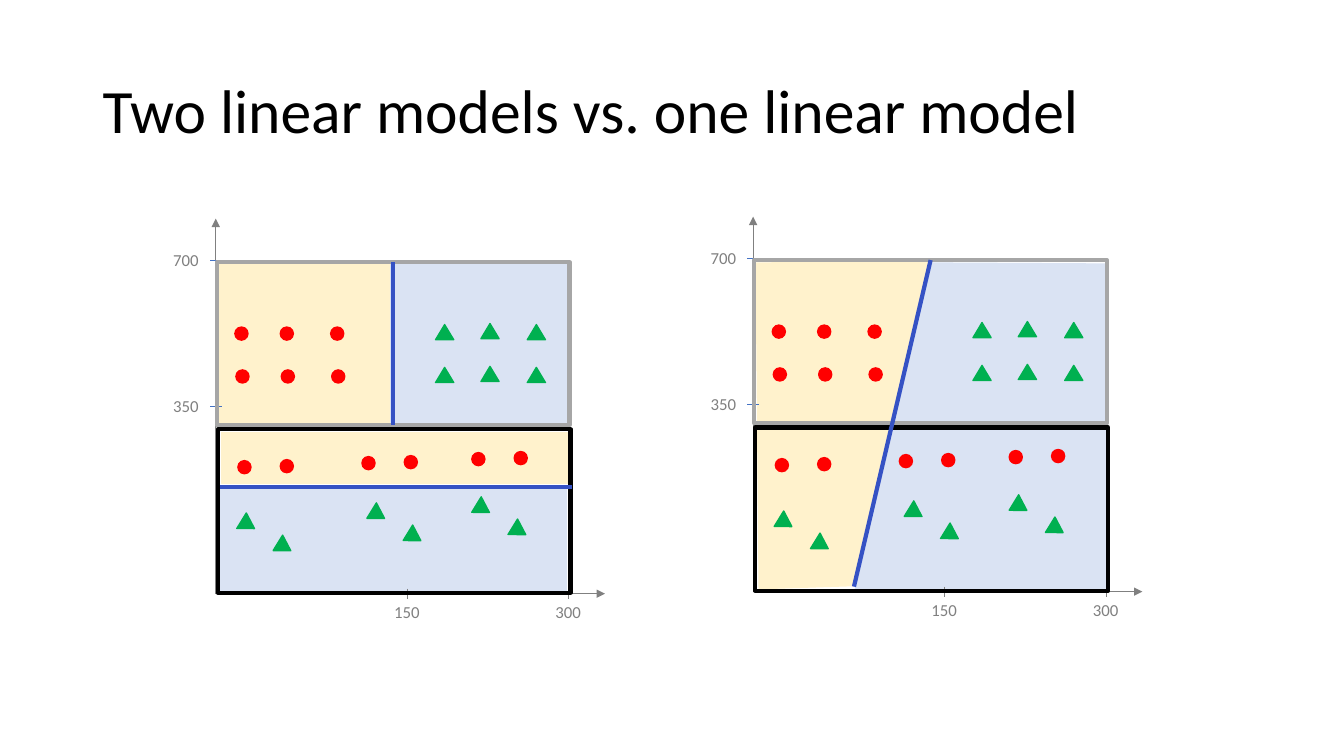
from dataclasses import dataclass

from lxml.etree import SubElement
from pptx import Presentation
from pptx.dml.color import RGBColor
from pptx.enum.shapes import MSO_CONNECTOR, MSO_SHAPE
from pptx.enum.text import MSO_ANCHOR
from pptx.oxml.ns import qn
from pptx.util import Inches, Pt


@dataclass(frozen=True)
class Theme:
    """Colours, font, type sizes and line widths of the slide."""
    font: str = "Calibri"
    title_size: int = 44
    label_size: int = 12
    title: str = "000000"
    axis: str = "808080"
    tick: str = "4472C4"
    cream: str = "FFF2CC"
    blue: str = "DAE3F3"
    circle: str = "FF0000"
    triangle: str = "00B050"
    upper_frame: str = "A6A6A6"
    lower_frame: str = "000000"
    boundary: str = "3552C4"
    thin: float = 0.5
    outline: float = 1
    thick: float = 3


THEME = Theme()
CELL = Inches(0.1)
LEFT_PANEL = (21.4, 21.7)
RIGHT_PANEL = (74.7, 21.5)
AXIS_WIDTH, AXIS_HEIGHT = 38.6, 37.2
X_TICKS = {"150": 19, "300": 35}
Y_TICKS = {"700": 4.1, "350": 18.6}
CIRCLE_SIZE = (1.3, 1.3)
TRIANGLE_SIZE = (1.8, 1.5)


@dataclass(frozen=True)
class Panel:
    """A plot whose positions count grid cells from the tip of its vertical axis."""
    slide: object
    column: float = 0
    row: float = 0

    def place(self, column, row):
        """Return the slide position of a grid point."""
        return round((self.column + column) * CELL), round((self.row + row) * CELL)

    def box(self, column, row, width, height):
        """Return the position and size of a grid rectangle."""
        return *self.place(column, row), round(width * CELL), round(height * CELL)


def paint(shape, fill, line, width=THEME.outline):
    """Set the fill and outline of a shape and drop its shadow."""
    shape.shadow.inherit = False
    if fill:
        shape.fill.solid()
        shape.fill.fore_color.rgb = RGBColor.from_string(fill)
    else:
        shape.fill.background()
    shape.line.color.rgb = RGBColor.from_string(line)
    shape.line.width = Pt(width)


def add_region(panel, box, color):
    """Add a rectangular class region."""
    paint(panel.slide.shapes.add_shape(MSO_SHAPE.RECTANGLE, *panel.box(*box)), color, color)


def add_polygon(panel, corners, color):
    """Add a class region with slanted sides."""
    points = [panel.place(*corner) for corner in corners]
    builder = panel.slide.shapes.build_freeform(*points[0], scale=1.0)
    builder.add_line_segments(points[1:], close=True)
    paint(builder.convert_to_shape(), color, color)


def add_frame(panel, box, color):
    """Add an unfilled thick frame and return it."""
    frame = panel.slide.shapes.add_shape(MSO_SHAPE.RECTANGLE, *panel.box(*box))
    paint(frame, None, color, THEME.thick)
    return frame


def add_line(panel, start, end, color, width=THEME.thin, arrow=False):
    """Add a straight line, with an arrowhead at its end if asked."""
    line = panel.slide.shapes.add_connector(
        MSO_CONNECTOR.STRAIGHT, *panel.place(*start), *panel.place(*end))
    line.line.color.rgb = RGBColor.from_string(color)
    line.line.width = Pt(width)
    if arrow:
        SubElement(line.line._get_or_add_ln(), qn("a:tailEnd"), type="triangle")
    SubElement(line._element.spPr, qn("a:effectLst"))
    return line


def add_text(panel, box, text, size, color, wrap=False):
    """Add a text box with one paragraph and return it."""
    shape = panel.slide.shapes.add_textbox(*panel.box(*box))
    shape.text_frame.word_wrap = wrap
    paragraph = shape.text_frame.paragraphs[0]
    paragraph.text = text
    paragraph.font.name = THEME.font
    paragraph.font.size = Pt(size)
    paragraph.font.color.rgb = RGBColor.from_string(color)
    return shape


def add_title(slide, text):
    """Add the slide title."""
    shape = add_text(Panel(slide), (9.2, 4, 115, 14.5), text,
                     THEME.title_size, THEME.title, wrap=True)
    shape.text_frame.vertical_anchor = MSO_ANCHOR.MIDDLE
    shape.text_frame.paragraphs[0].line_spacing = 0.9


def add_axes(panel):
    """Add both axes with their ticks and labels."""
    corner = (0, AXIS_HEIGHT)
    for tip in ((0, 0), (AXIS_WIDTH, AXIS_HEIGHT)):
        add_line(panel, corner, tip, THEME.axis, arrow=True)
    for label, column in X_TICKS.items():
        add_line(panel, (column, AXIS_HEIGHT - 0.5), (column, AXIS_HEIGHT + 0.5), THEME.axis)
        add_text(panel, (column - 2.3, AXIS_HEIGHT + 0.3, 4.6, 3), label,
                 THEME.label_size, THEME.axis)
    for label, row in Y_TICKS.items():
        add_line(panel, (0.6, row), (-0.6, row), THEME.tick)
        add_text(panel, (-5.2, row - 1.5, 4.6, 3), label, THEME.label_size, THEME.axis)


def add_marker(panel, kind, position, size, color, rotation=0):
    """Add one data point."""
    marker = panel.slide.shapes.add_shape(kind, *panel.box(*position, *size))
    marker.rotation = rotation
    paint(marker, color, color)


def add_circle(panel, column, row):
    """Add a point of the circle class."""
    add_marker(panel, MSO_SHAPE.OVAL, (column, row), CIRCLE_SIZE, THEME.circle)


def add_triangle(panel, column, row, rotation=0):
    """Add a point of the triangle class."""
    add_marker(panel, MSO_SHAPE.ISOSCELES_TRIANGLE, (column, row), TRIANGLE_SIZE,
               THEME.triangle, rotation)


def add_data(panel):
    """Add the points of both classes in the upper and lower halves."""
    for line in range(2):
        for column in (1.9, 6.4, 11.4):
            add_circle(panel, column + 0.1 * line, 10.75 + 4.25 * line)
        for column, row in ((21.8, 10.5), (26.3, 10.4), (30.9, 10.5)):
            add_triangle(panel, column, row + 4.25 * line)
        for column, row in ((2.2, 24), (14.5, 23.6), (25.4, 23.2)):
            add_circle(panel, column + 4.2 * line, row - 0.1 * line)
        for column, row in ((2.3, 29.6), (15.2, 28.6), (25.6, 28)):
            add_triangle(panel, column + 3.6 * line, row + 2.2 * line, 121.5)


def add_plot(panel):
    """Add axes, data and frames over the regions and return the upper frame."""
    add_axes(panel)
    add_data(panel)
    add_frame(panel, (0.2, 20.9, 35, 16.2), THEME.lower_frame)
    return add_frame(panel, (0.1, 4.3, 35, 16.2), THEME.upper_frame)


def add_two_models(panel):
    """Add the plot split by one boundary in each half."""
    add_region(panel, (0.6, 21.2, 34.3, 5.1), THEME.cream)
    add_region(panel, (0.4, 26.6, 34.4, 10.3), THEME.blue)
    add_region(panel, (17.3, 4.4, 17.7, 16.2), THEME.blue)
    add_region(panel, (0.2, 4.3, 17, 16.2), THEME.cream)
    frame = add_plot(panel)
    divider = add_line(panel, (17.6, 4.3), (17.6, 20.5), THEME.boundary, THEME.thick)
    divider.begin_connect(frame, 0)
    divider.end_connect(frame, 2)
    add_line(panel, (0.4, 26.6), (35.3, 26.6), THEME.boundary, THEME.thick)


def add_one_model(panel):
    """Add the plot split by a single slanted boundary."""
    add_polygon(panel, ((17.7, 4.6), (10.1, 37.1), (35.1, 37.1), (35.1, 4.7)), THEME.blue)
    add_polygon(panel, ((17.5, 4.5), (0.3, 4.6), (0.6, 36.9), (9.9, 36.6)), THEME.cream)
    frame = add_plot(panel)
    divider = add_line(panel, (17.6, 4.3), (10, 36.7), THEME.boundary, THEME.thick)
    divider.begin_connect(frame, 0)


def main():
    """Build the slide and save the presentation."""
    presentation = Presentation()
    presentation.slide_width = Inches(13.33)
    presentation.slide_height = Inches(7.5)
    slide = presentation.slides.add_slide(presentation.slide_layouts[6])
    add_two_models(Panel(slide, *LEFT_PANEL))
    add_one_model(Panel(slide, *RIGHT_PANEL))
    add_title(slide, "Two linear models vs. one linear model")
    presentation.save("out.pptx")


if __name__ == "__main__":
    main()
